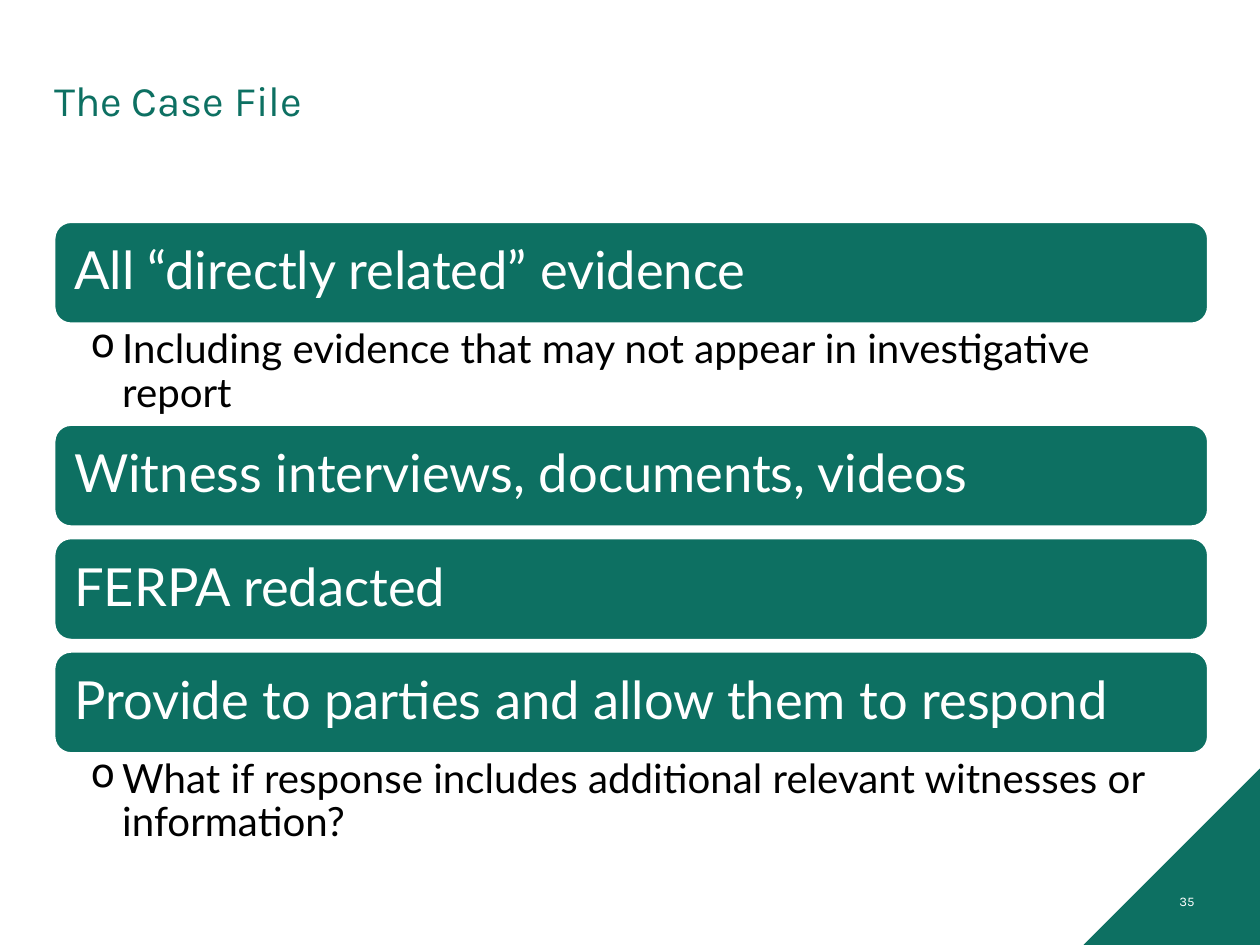
import pptx
import pptx.dml.color
import pptx.enum.shapes
import pptx.enum.text
import pptx.oxml
import pptx.oxml.ns
import pptx.util
from pptx.util import Inches

RGBColor = pptx.dml.color.RGBColor
Shape = pptx.enum.shapes.MSO_SHAPE
Anchor = pptx.enum.text.MSO_ANCHOR
Align = pptx.enum.text.PP_ALIGN

GREEN = RGBColor(0x0D, 0x70, 0x62)
WHITE = RGBColor(0xFF, 0xFF, 0xFF)
BLACK = RGBColor(0x00, 0x00, 0x00)

LEFT, WIDTH = 0.43, 9.16
LIST_TOP = 1.76
BAR_HEIGHT, DETAIL_HEIGHT, GAP = 0.81, 0.8, 0.09

# Heading and optional detail of each bar
ITEMS = [
    ("All “directly related” evidence",
     "Including evidence that may not appear in investigative report"),
    ("Witness interviews, documents, videos", None),
    ("FERPA redacted", None),
    ("Provide to parties and allow them to respond",
     "What if response includes additional relevant witnesses or information?"),
]


class SlideBuilder:
    title_font = "Karla"
    body_font = "Lato"

    def __init__(self, page):
        self.page = page

    def set_text(self, shape, text, font, size, color, insets,
                 anchor=Anchor.MIDDLE, align=Align.LEFT, line_spacing=0.9, bullet=None):
        frame = shape.text_frame
        frame.word_wrap = True
        frame.vertical_anchor = anchor
        (frame.margin_left, frame.margin_top,
         frame.margin_right, frame.margin_bottom) = map(Inches, insets)
        para = frame.paragraphs[0]
        para.text = text
        para.alignment = align
        para.line_spacing = line_spacing
        if bullet:
            properties = para._p.get_or_add_pPr()
            properties.set("marL", str(Inches(0.25)))
            properties.set("indent", str(Inches(-0.25)))
            mark = pptx.oxml.parse_xml(
                f'<a:buChar {pptx.oxml.ns.nsdecls("a")} char="{bullet}"/>')
            properties.append(mark)
        para.font.name = font
        para.font.size = pptx.util.Pt(size)
        para.font.color.rgb = color

    def text_box(self, place, *args, **kwargs):
        box = self.page.shapes.add_textbox(*map(Inches, place))
        self.set_text(box, *args, **kwargs)

    def filled_shape(self, kind, place):
        shape = self.page.shapes.add_shape(kind, *map(Inches, place))
        shape.shadow.inherit = False
        shape.fill.solid()
        shape.fill.fore_color.rgb = GREEN
        shape.line.fill.background()
        return shape

    def corner(self):
        triangle = self.filled_shape(Shape.RIGHT_TRIANGLE, (8.6, 6.1, 1.4, 1.4))
        triangle._element.spPr.xfrm.set("flipH", "1")

    def title(self, text):
        self.text_box((LEFT, 0.4, WIDTH, 0.83), text, self.title_font, 24, GREEN,
                      (0, 0.05, 0.1, 0.05))

    def bar(self, top, text):
        bar = self.filled_shape(Shape.ROUNDED_RECTANGLE, (LEFT, top, WIDTH, BAR_HEIGHT))
        bar.line.color.rgb = WHITE
        bar.line.width = pptx.util.Pt(1.5)
        self.set_text(bar, text, self.body_font, 30, WHITE, (0.12, 0.12, 0.12, 0.12))

    def detail(self, top, text):
        self.text_box((LEFT, top, WIDTH, DETAIL_HEIGHT), text, self.body_font, 23, BLACK,
                      (0.29, 0.04, 0.23, 0.04), anchor=Anchor.TOP, bullet="o")

    def page_number(self, text):
        self.text_box((7.33, 6.95, 2.25, 0.4), text, self.title_font, 7.5, WHITE,
                      (0.1, 0.05, 0.1, 0.05), align=Align.RIGHT, line_spacing=1.0)


def main():
    deck = pptx.Presentation()
    deck.slide_width, deck.slide_height = Inches(10), Inches(7.5)
    builder = SlideBuilder(deck.slides.add_slide(deck.slide_layouts[6]))

    # Corner and title
    builder.corner()
    builder.title("The Case File")

    # Stacked bars; a detail takes the place of the gap below its bar
    top = LIST_TOP
    for heading, detail in ITEMS:
        builder.bar(top, heading)
        top += BAR_HEIGHT
        if detail:
            builder.detail(top, detail)
            top += DETAIL_HEIGHT
        else:
            top += GAP

    # Page number
    builder.page_number("35")
    deck.save("out.pptx")


if __name__ == "__main__":
    main()
